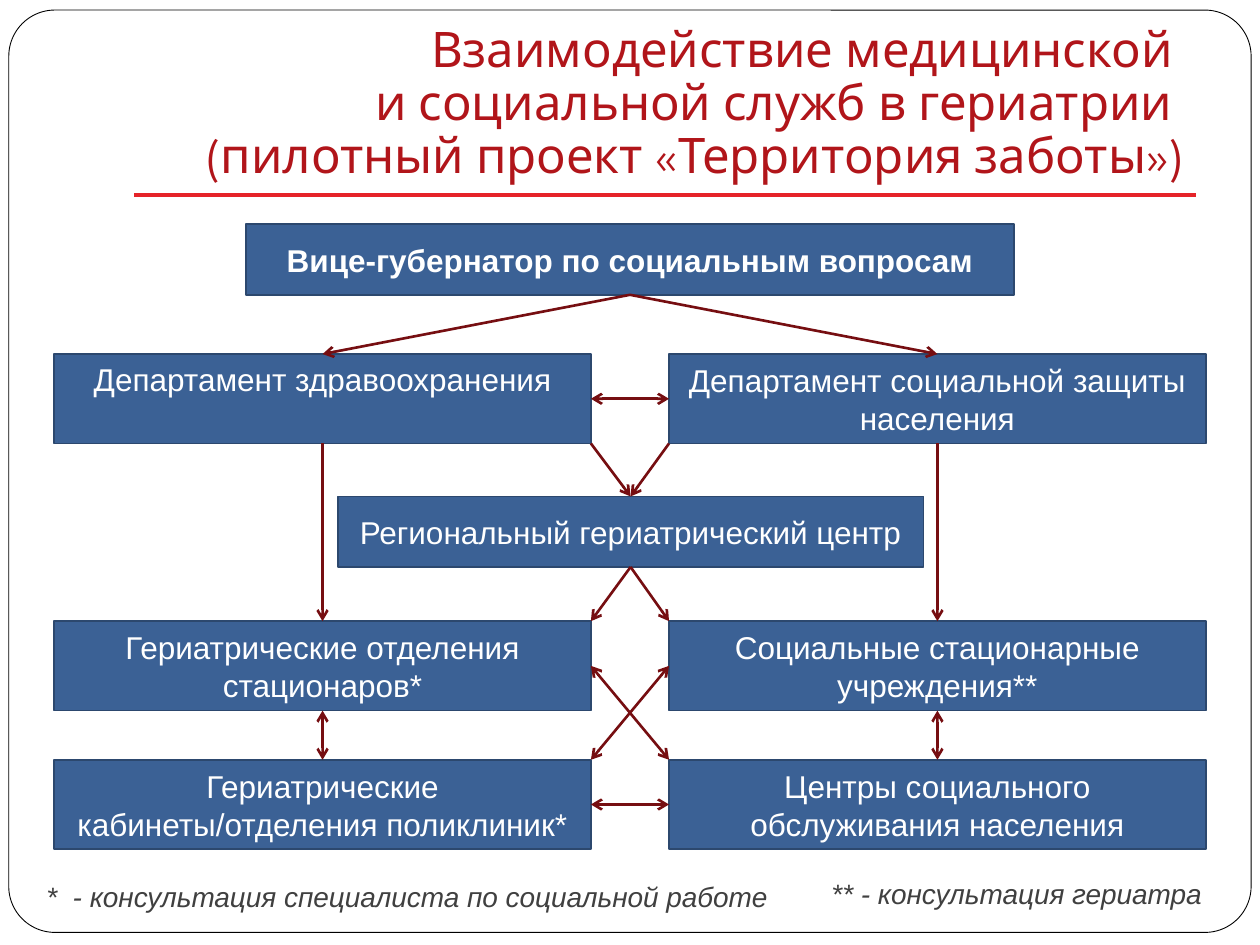
from dataclasses import dataclass

from lxml import etree
from pptx import Presentation
from pptx.dml.color import RGBColor
from pptx.enum.shapes import MSO_CONNECTOR, MSO_SHAPE
from pptx.enum.text import MSO_ANCHOR, MSO_AUTO_SIZE, PP_ALIGN
from pptx.oxml.ns import qn
from pptx.util import Inches, Pt

RECT, ROUND_RECT = MSO_SHAPE.RECTANGLE, MSO_SHAPE.ROUNDED_RECTANGLE
STRAIGHT = MSO_CONNECTOR.STRAIGHT
TOP, MIDDLE, BOTTOM = MSO_ANCHOR.TOP, MSO_ANCHOR.MIDDLE, MSO_ANCHOR.BOTTOM
LEFT, CENTER, RIGHT = PP_ALIGN.LEFT, PP_ALIGN.CENTER, PP_ALIGN.RIGHT

WHITE = RGBColor(0xFF, 0xFF, 0xFF)
BLACK = RGBColor(0x00, 0x00, 0x00)
BLUE = RGBColor(0x3B, 0x61, 0x95)
NAVY = RGBColor(0x2C, 0x48, 0x6E)
RED = RGBColor(0xE5, 0x23, 0x29)
TITLE_RED = RGBColor(0xB1, 0x15, 0x1A)
MAROON = RGBColor(0x76, 0x0E, 0x11)
GRAY = RGBColor(0x40, 0x40, 0x40)

TITLE_FONT = {"name": "League Spartan", "size": Pt(28)}
BOX_FONT = {"name": "Arial", "size": Pt(18)}
NOTE_FONT = {"name": "Arial", "size": Pt(16), "italic": True}

Point = tuple[float, float]


@dataclass
class Box:
    text: str
    x: float
    y: float
    w: float
    h: float
    bold: bool = False
    anchor: MSO_ANCHOR = MIDDLE

    def at(self, fx: float, fy: float) -> Point:
        """Point at the given fractions of the box width and height."""
        return self.x + fx * self.w, self.y + fy * self.h


@dataclass
class Arrow:
    start: Point
    end: Point
    both: bool = False


def write(tf, text: str, align: PP_ALIGN, color: RGBColor, font: dict) -> None:
    p = tf.paragraphs[0]
    p.text = text
    p.alignment = align
    for r in p.runs:
        r.font.color.rgb = color
        for name, value in font.items():
            setattr(r.font, name, value)


def add_panel(slide, kind: MSO_SHAPE, box: Box, fill: RGBColor,
              line: RGBColor, width: float):
    sp = slide.shapes.add_shape(kind, *map(Inches, (box.x, box.y, box.w, box.h)))
    sp.shadow.inherit = False
    sp.fill.solid()
    sp.fill.fore_color.rgb = fill
    sp.line.color.rgb = line
    sp.line.width = Pt(width)
    return sp


def add_box(slide, box: Box) -> None:
    sp = add_panel(slide, RECT, box, BLUE, NAVY, 1)
    tf = sp.text_frame
    tf.word_wrap = True
    tf.vertical_anchor = box.anchor
    write(tf, box.text, CENTER, WHITE, BOX_FONT | {"bold": box.bold})


def add_line(slide, start: Point, end: Point, color: RGBColor, width: float):
    cx = slide.shapes.add_connector(STRAIGHT, *map(Inches, (*start, *end)))
    cx.line.color.rgb = color
    cx.line.width = Pt(width)
    etree.SubElement(cx._element.spPr, qn("a:effectLst"))
    return cx


def add_arrow(slide, arrow: Arrow) -> None:
    cx = add_line(slide, arrow.start, arrow.end, MAROON, 1.5)
    ends = ("a:headEnd", "a:tailEnd") if arrow.both else ("a:tailEnd",)
    for tag in ends:
        etree.SubElement(cx.line._get_or_add_ln(), qn(tag), type="arrow")


def add_note(slide, text: str, x: float, y: float, w: float) -> None:
    tf = slide.shapes.add_textbox(*map(Inches, (x, y, w, 0.37))).text_frame
    tf.word_wrap = False
    tf.auto_size = MSO_AUTO_SIZE.SHAPE_TO_FIT_TEXT
    write(tf, text, LEFT, GRAY, NOTE_FONT)


def add_title(slide, text: str) -> None:
    tf = slide.shapes.add_textbox(*map(Inches, (1, 0.54, 8.5, 1.02))).text_frame
    tf.word_wrap = True
    tf.vertical_anchor = BOTTOM
    tf.margin_bottom = Inches(0.1)
    write(tf, text, RIGHT, TITLE_RED, TITLE_FONT)
    tf.paragraphs[0].line_spacing = 0.9


def main() -> None:
    prs = Presentation()
    prs.slide_width, prs.slide_height = Inches(10), Inches(7.5)
    slide = prs.slides.add_slide(prs.slide_layouts[6])

    frame = add_panel(slide, ROUND_RECT, Box("", 0.07, 0.08, 9.86, 7.32),
                      WHITE, BLACK, 0.5)
    frame.adjustments[0] = 0.05
    add_line(slide, (9.49, 1.55), (1.06, 1.55), RED, 2.25)

    left_x, right_x, w, h = 0.43, 5.31, 4.26, 0.71
    rows = (2.81, 4.93, 6.03)
    governor = Box("Вице-губернатор по социальным вопросам",
                   1.95, 1.78, 6.1, 0.56, bold=True)
    center = Box("Региональный гериатрический центр", 2.68, 3.94, 4.65, 0.56)
    left_texts = ("Департамент здравоохранения",
                  "Гериатрические отделения стационаров*",
                  "Гериатрические кабинеты/отделения поликлиник*")
    right_texts = ("Департамент социальной защиты населения",
                   "Социальные стационарные учреждения**",
                   "Центры социального обслуживания населения")
    lefts = [Box(t, left_x, y, w, h) for t, y in zip(left_texts, rows)]
    rights = [Box(t, right_x, y, w, h) for t, y in zip(right_texts, rows)]
    lefts[0].anchor = TOP
    for box in (governor, center, *lefts, *rights):
        add_box(slide, box)

    add_note(slide, "*  - консультация специалиста по социальной работе",
             0.27, 6.93, 5.99)
    add_note(slide, "** - консультация гериатра", 6.5, 6.91, 3.18)

    # Each side mirrors the other: inner is the edge facing the middle.
    arrows = []
    for (dept, ward, clinic), inner, other in ((lefts, 1, rights),
                                               (rights, 0, lefts)):
        arrows += [
            Arrow(governor.at(0.5, 1), dept.at(0.5, 0)),
            Arrow(dept.at(inner, 1), center.at(0.5, 0)),
            Arrow(center.at(0.5, 1), ward.at(inner, 0)),
            Arrow(dept.at(0.5, 1), ward.at(0.5, 0)),
            Arrow(ward.at(0.5, 1), clinic.at(0.5, 0), both=True),
            Arrow(ward.at(inner, 0.5), other[2].at(1 - inner, 0), both=True),
        ]
    for row in (0, 2):
        arrows.append(Arrow(lefts[row].at(1, 0.5), rights[row].at(0, 0.5), both=True))
    for arrow in arrows:
        add_arrow(slide, arrow)

    add_title(slide, "Взаимодействие медицинской \n"
                     "и социальной служб в гериатрии \n"
                     "(пилотный проект «Территория заботы»)")
    prs.save("out.pptx")


if __name__ == "__main__":
    main()
